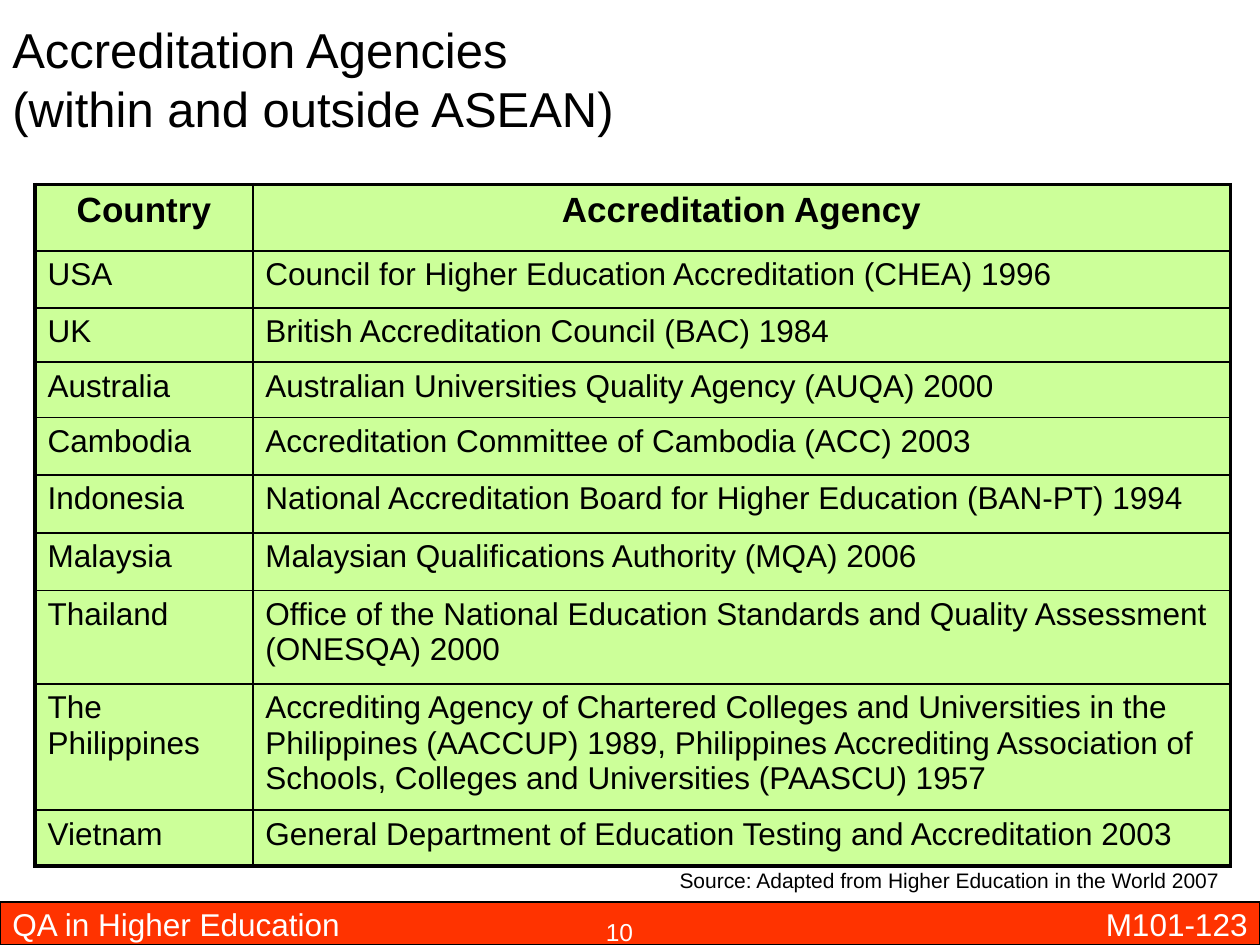
from dataclasses import dataclass

from lxml.etree import SubElement
from pptx import Presentation
from pptx.dml.color import RGBColor
from pptx.enum.shapes import MSO_SHAPE
from pptx.enum.text import MSO_ANCHOR, PP_ALIGN
from pptx.oxml.ns import qn
from pptx.util import Pt


@dataclass(frozen=True)
class Theme:
    font: str = "Arial"
    ink: str = "000000"
    light: str = "FFFFFF"
    bar: str = "FF3300"
    cell: str = "CCFF99"
    title: float = 28
    header: float = 20
    body: float = 18
    number: float = 14
    source: float = 12
    outer_border: float = 2.25
    inner_border: float = 1


class SlideBuilder:
    def __init__(self, prs, theme):
        self.theme = theme
        self.s = prs.slides.add_slide(prs.slide_layouts[6])

    def style(self, p, size, color, align=PP_ALIGN.LEFT, bold=False):
        p.alignment = align
        p.font.name = self.theme.font
        p.font.size = Pt(size)
        p.font.bold = bold
        p.font.color.rgb = RGBColor.from_string(color)

    def bar(self, x, y, w, h):
        sp = self.s.shapes.add_shape(MSO_SHAPE.RECTANGLE, Pt(x), Pt(y), Pt(w), Pt(h))
        sp.shadow.inherit = False
        sp.fill.solid()
        sp.fill.fore_color.rgb = RGBColor.from_string(self.theme.bar)
        sp.line.color.rgb = RGBColor.from_string(self.theme.ink)
        sp.line.width = Pt(0.75)

    def text(self, text, x, y, w, h, size, color, align=PP_ALIGN.LEFT,
             anchor=MSO_ANCHOR.TOP):
        tf = self.s.shapes.add_textbox(Pt(x), Pt(y), Pt(w), Pt(h)).text_frame
        tf.word_wrap = True
        tf.vertical_anchor = anchor
        p = tf.paragraphs[0]
        p.text = text
        self.style(p, size, color, align)

    def border(self, cell, side, width):
        ln = SubElement(cell._tc.get_or_add_tcPr(), qn(f"a:ln{side}"), w=str(Pt(width)))
        fill = SubElement(ln, qn("a:solidFill"))
        SubElement(fill, qn("a:srgbClr"), val=self.theme.ink)

    def table(self, rows, x, y, col_widths, row_heights):
        """Draw a table with a bold header row and a thicker outer frame."""
        t = self.theme
        table = self.s.shapes.add_table(
            len(rows), len(col_widths), Pt(x), Pt(y),
            Pt(sum(col_widths)), Pt(sum(row_heights))).table
        for col, width in zip(table.columns, col_widths):
            col.width = Pt(width)
        last_row, last_col = len(rows) - 1, len(col_widths) - 1
        for i, (row, height) in enumerate(zip(rows, row_heights)):
            table.rows[i].height = Pt(height)
            for j, text in enumerate(row):
                cell = table.cell(i, j)
                outer = {"L": j == 0, "R": j == last_col,
                         "T": i == 0, "B": i == last_row}
                for side, is_outer in outer.items():
                    self.border(cell, side, t.outer_border if is_outer else t.inner_border)
                cell.fill.solid()
                cell.fill.fore_color.rgb = RGBColor.from_string(t.cell)
                p = cell.text_frame.paragraphs[0]
                p.text = text
                if i == 0:
                    self.style(p, t.header, t.ink, PP_ALIGN.CENTER, bold=True)
                else:
                    self.style(p, t.body, t.ink)


AGENCIES = [
    ("Country", "Accreditation Agency"),
    ("USA", "Council for Higher Education Accreditation (CHEA) 1996"),
    ("UK", "British Accreditation Council (BAC) 1984"),
    ("Australia", "Australian Universities Quality Agency (AUQA) 2000"),
    ("Cambodia", "Accreditation Committee of Cambodia (ACC) 2003"),
    ("Indonesia", "National Accreditation Board for Higher Education (BAN-PT) 1994"),
    ("Malaysia", "Malaysian Qualifications Authority (MQA) 2006"),
    ("Thailand", "Office of the National Education Standards and Quality Assessment "
                 "(ONESQA) 2000"),
    ("The Philippines", "Accrediting Agency of Chartered Colleges and Universities in the "
                        "Philippines (AACCUP) 1989, Philippines Accrediting Association of "
                        "Schools, Colleges and Universities (PAASCU) 1957"),
    ("Vietnam", "General Department of Education Testing and Accreditation 2003"),
]
COL_WIDTHS = [124.5, 558.5]
ROW_HEIGHTS = [38, 32.5, 31, 31.5, 33, 33, 33, 53.5, 72, 32]


def main():
    prs = Presentation()
    prs.slide_width, prs.slide_height = Pt(720), Pt(540)
    t = Theme()
    b = SlideBuilder(prs, t)

    b.bar(0, 515.5, 720, 24.5)
    b.text("10", 270, 520.5, 168, 19.5, t.number, t.light, PP_ALIGN.CENTER)
    b.text("Accreditation Agencies\v(within and outside ASEAN)", 0, 0, 544.5, 90,
           t.title, t.ink, anchor=MSO_ANCHOR.MIDDLE)
    b.text("QA in Higher Education", 0, 513.5, 294.5, 29, t.body, t.light)
    b.text("M101-123", 618.5, 513.5, 101.5, 29, t.body, t.light, PP_ALIGN.RIGHT)
    b.table(AGENCIES, 20, 105.5, COL_WIDTHS, ROW_HEIGHTS)
    b.text("Source: Adapted from Higher Education in the World 2007",
           299.5, 492.5, 404.5, 21.5, t.source, t.ink, PP_ALIGN.RIGHT)

    prs.save("out.pptx")


if __name__ == "__main__":
    main()
